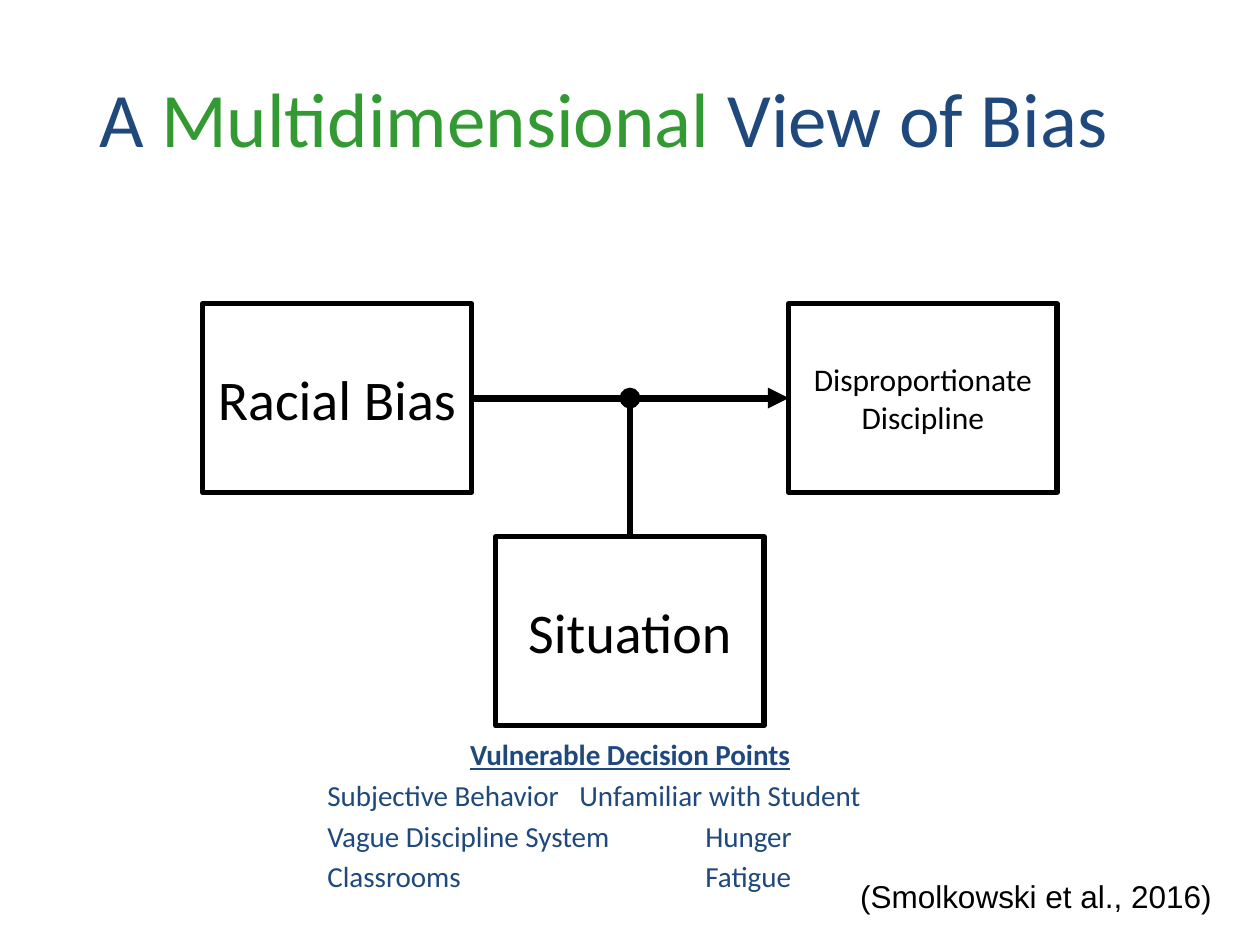
"""Build a slide on how situation moderates the effect of racial bias."""
import pptx
import pptx.dml.color
import pptx.enum.shapes
import pptx.enum.text
import pptx.oxml
import pptx.oxml.ns
import pptx.util

Cm = pptx.util.Cm
Pt = pptx.util.Pt
ALIGN = pptx.enum.text.PP_ALIGN
ANCHOR = pptx.enum.text.MSO_ANCHOR

COLORS = {"ink": "000000", "paper": "FFFFFF", "navy": "1F497D", "green": "339933"}
BOX_W, BOX_H = 5.41, 3.81
LEFT_X, RIGHT_X, TOP_Y = 4.09, 15.9, 6.12
MID_X, MID_Y = 12.7, TOP_Y + BOX_H / 2
LOW_Y = 10.82
POINTS = [
    ("Subjective Behavior", "Unfamiliar with Student", 10.16),
    ("Vague Discipline System", "Hunger", 12.7),
    ("Classrooms", "Fatigue", 12.7),
]


def rgb(name):
    return pptx.dml.color.RGBColor.from_string(COLORS[name])


def style(item, values):
    for key, value in values.items():
        setattr(item, key, value)


def add_run(para, text, color, **font):
    run = para.add_run()
    run.text = text
    style(run.font, {"name": "Calibri", **font})
    run.font.color.rgb = rgb(color)


def add_tabs(para, stops):
    tabs = pptx.oxml.parse_xml(f"<a:tabLst {pptx.oxml.ns.nsdecls('a')}/>")
    for stop in stops:
        tab = tabs.makeelement(pptx.oxml.ns.qn("a:tab"), {"pos": str(Cm(stop)), "algn": "l"})
        tabs.append(tab)
    para._p.get_or_add_pPr().append(tabs)


def add_text(slide, x, y, w, h, anchor=ANCHOR.TOP):
    frame = slide.shapes.add_textbox(Cm(x), Cm(y), Cm(w), Cm(h)).text_frame
    style(frame, {"word_wrap": True, "vertical_anchor": anchor})
    return frame


def add_box(slide, x, y, text, size):
    kind = pptx.enum.shapes.MSO_SHAPE.RECTANGLE
    box = slide.shapes.add_shape(kind, Cm(x), Cm(y), Cm(BOX_W), Cm(BOX_H))
    box.shadow.inherit = False
    box.fill.solid()
    box.fill.fore_color.rgb = rgb("paper")
    box.line.color.rgb = rgb("ink")
    box.line.width = Pt(3)
    style(box.text_frame, {"word_wrap": True, "vertical_anchor": ANCHOR.MIDDLE})
    para = box.text_frame.paragraphs[0]
    para.alignment = ALIGN.CENTER
    add_run(para, text, "ink", size=Pt(size))


def add_line(slide, start, end, tip):
    kind = pptx.enum.shapes.MSO_CONNECTOR.STRAIGHT
    line = slide.shapes.add_connector(kind, *map(Cm, start + end))
    line.line.color.rgb = rgb("ink")
    line.line.width = Pt(4)
    decls = pptx.oxml.ns.nsdecls("a")
    line.line._get_or_add_ln().append(pptx.oxml.parse_xml(f'<a:tailEnd {decls} type="{tip}"/>'))
    line._element.spPr.append(pptx.oxml.parse_xml(f"<a:effectLst {decls}/>"))


def add_title(slide):
    para = add_text(slide, 1.27, 0.76, 21.79, 3.18, ANCHOR.MIDDLE).paragraphs[0]
    para.alignment = ALIGN.CENTER
    parts = [("A ", "navy"), ("Multidimensional", "green"), (" View of Bias", "navy")]
    for text, color in parts:
        add_run(para, text, color, size=Pt(44))


def add_points(slide):
    frame = add_text(slide, 1.27, 14.73, 22.86, 3.4)
    head = frame.paragraphs[0]
    head.alignment = ALIGN.CENTER
    size = Pt(16.6)
    add_run(head, "Vulnerable Decision Points", "navy", size=size, bold=True, underline=True)
    for first, second, stop in POINTS:
        para = frame.add_paragraph()
        para.space_before = Pt(3.3)
        add_tabs(para, [5.08, stop])
        add_run(para, f"\t{first}\t{second}", "navy", size=size)


def add_source(slide):
    para = add_text(slide, 17.09, 17.55, 7.8, 1.17).paragraphs[0]
    add_run(para, "(Smolkowski et al., 2016)", "ink", name="Arial", size=Pt(18))


def main():
    deck = pptx.Presentation()
    style(deck, {"slide_width": Cm(25.4), "slide_height": Cm(19.05)})
    slide = deck.slides.add_slide(deck.slide_layouts[6])
    slide.background.fill.solid()
    slide.background.fill.fore_color.rgb = rgb("paper")
    add_line(slide, (LEFT_X + BOX_W, MID_Y), (RIGHT_X, MID_Y), "triangle")
    add_box(slide, LEFT_X, TOP_Y, "Racial Bias", 32)
    add_box(slide, RIGHT_X, TOP_Y, "Disproportionate Discipline", 18)
    add_box(slide, MID_X - BOX_W / 2, LOW_Y, "Situation", 32)
    add_line(slide, (MID_X, LOW_Y), (MID_X, MID_Y), "oval")
    add_title(slide)
    add_points(slide)
    add_source(slide)
    deck.save("out.pptx")


if __name__ == "__main__":
    main()
